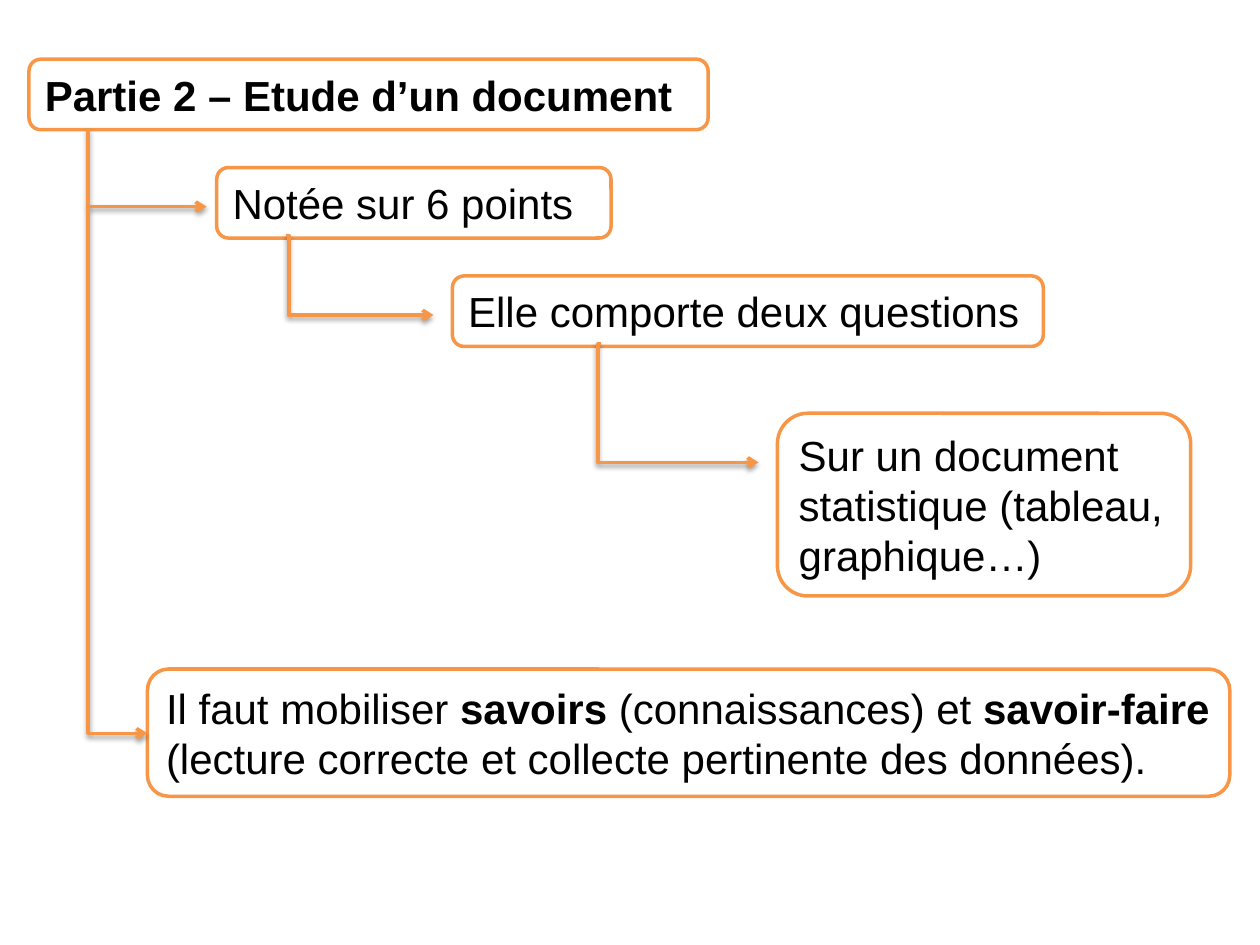
from lxml import etree
from pptx import Presentation
from pptx.dml.color import RGBColor
from pptx.enum.shapes import MSO_CONNECTOR, MSO_SHAPE
from pptx.enum.text import MSO_ANCHOR, MSO_AUTO_SIZE, PP_ALIGN
from pptx.oxml.ns import qn
from pptx.util import Inches, Pt

ROUND = MSO_SHAPE.ROUNDED_RECTANGLE
ELBOW = MSO_CONNECTOR.ELBOW
MIDDLE = MSO_ANCHOR.MIDDLE
GROW = MSO_AUTO_SIZE.SHAPE_TO_FIT_TEXT
LEFT = PP_ALIGN.LEFT

COLORS = {"line": "F79646", "fill": "FFFFFF", "text": "000000", "shadow": "000000"}
FONT = {"name": "Arial", "size": Pt(24)}
FRAME = {"word_wrap": True, "auto_size": GROW, "vertical_anchor": MIDDLE}

BOXES = [
    ((0.23, 0.47, 5.39, 0.56), [("Partie 2 – Etude d’un document", True)]),
    ((1.72, 1.33, 3.13, 0.56), [("Notée sur 6 points", False)]),
    ((3.59, 2.19, 4.69, 0.56), [("Elle comporte deux questions", False)]),
    ((6.17, 3.28, 3.28, 1.45),
     [("Sur un document statistique (tableau, graphique…)", False)]),
    ((1.17, 5.31, 8.59, 1.01), [
        ("Il faut mobiliser ", False),
        ("savoirs", True),
        (" (connaissances) et ", False),
        ("savoir-faire", True),
        (" (lecture correcte et collecte pertinente des données).", False),
    ]),
]

ARROWS = [
    ((0.7, 1.02, 1.64, 1.64), 0),
    ((2.27, 1.87, 3.44, 2.5), 1900),
    ((4.77, 2.73, 6.02, 3.67), -1900),
    ((0.7, 1.64, 1.17, 5.82), 0),
]


def color(key):
    return RGBColor.from_string(COLORS[key])


def node(parent, tag, **attrs):
    return etree.SubElement(parent, qn(tag), {k: str(v) for k, v in attrs.items()})


def outline(shape):
    shape.line.color.rgb = color("line")
    shape.line.width = Pt(2)


def add_box(slide, place, runs):
    box = slide.shapes.add_shape(ROUND, *map(Inches, place))
    box.shadow.inherit = False
    box.fill.solid()
    box.fill.fore_color.rgb = color("fill")
    outline(box)
    frame = box.text_frame
    for key, value in FRAME.items():
        setattr(frame, key, value)
    para = frame.paragraphs[0]
    para.alignment = LEFT
    for text, bold in runs:
        run = para.add_run()
        run.text = text
        for key, value in {**FONT, "bold": bold}.items():
            setattr(run.font, key, value)
        run.font.color.rgb = color("text")


def add_arrow(slide, ends, bend):
    arrow = slide.shapes.add_connector(ELBOW, *map(Inches, ends))
    outline(arrow)
    props = arrow._element.spPr
    guides = props.find(qn("a:prstGeom")).find(qn("a:avLst"))
    node(guides, "a:gd", name="adj1", fmla=f"val {bend}")
    node(props.find(qn("a:ln")), "a:tailEnd", type="arrow")
    effects = node(props, "a:effectLst")
    shadow = node(effects, "a:outerShdw", blurRad=Pt(3.1), dist=Pt(1.6),
                  dir=5400000, rotWithShape=0)
    tint = node(shadow, "a:srgbClr", val=COLORS["shadow"])
    node(tint, "a:alpha", val=38000)


def main():
    deck = Presentation()
    deck.slide_width, deck.slide_height = Inches(10), Inches(7.5)
    slide = deck.slides.add_slide(deck.slide_layouts[6])
    for place, runs in BOXES:
        add_box(slide, place, runs)
    for ends, bend in ARROWS:
        add_arrow(slide, ends, bend)
    deck.save("out.pptx")


if __name__ == "__main__":
    main()
